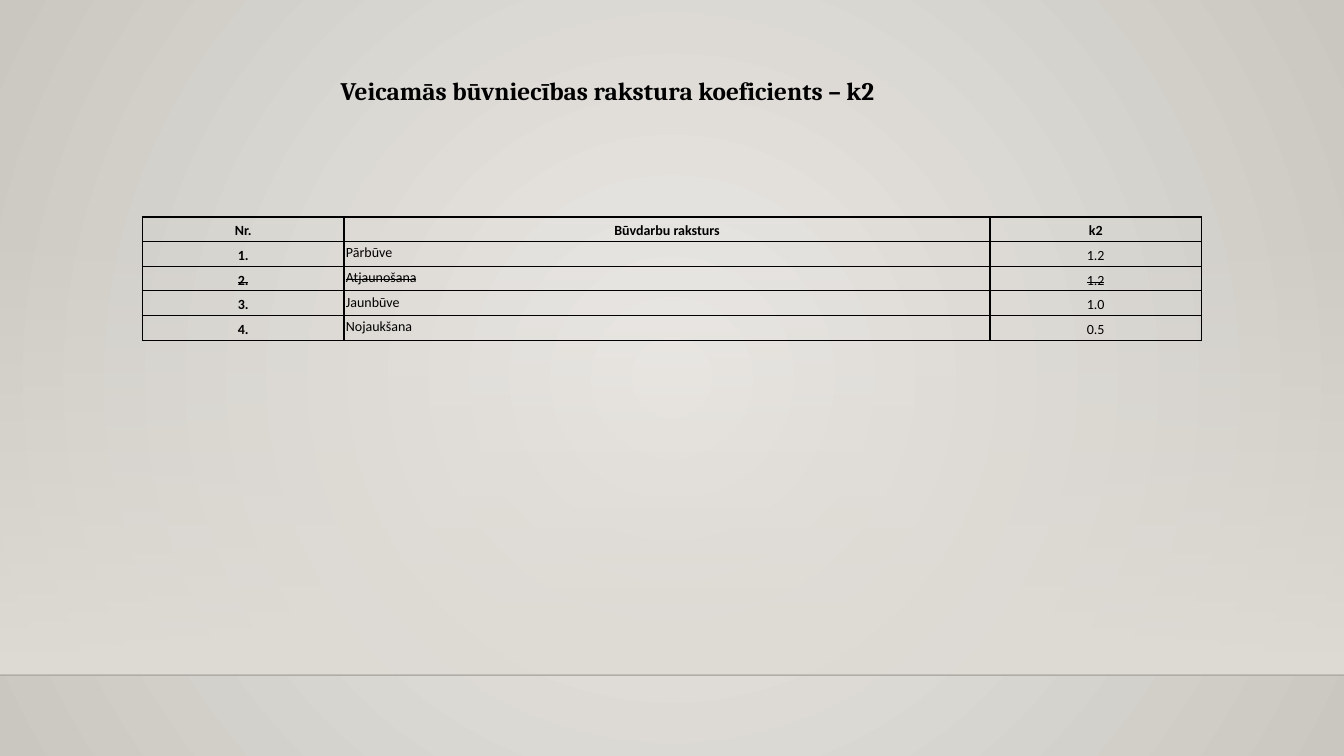
from lxml.etree import SubElement
from pptx import Presentation
from pptx.dml.color import RGBColor
from pptx.enum.shapes import MSO_CONNECTOR, MSO_SHAPE
from pptx.enum.text import MSO_ANCHOR, MSO_AUTO_SIZE, PP_ALIGN
from pptx.oxml import parse_xml
from pptx.oxml.ns import nsdecls, qn
from pptx.util import Inches, Pt

COLORS = {"ink": "000000", "line": "000001", "center": "ECEAE7",
          "edge": "CAC7C1", "floor": "DFDBD5"}
FONTS = {"title": "Cambria", "table": "Calibri"}
HEADERS = ["Nr.", "Būvdarbu raksturs", "k2"]
ROWS = [
    ["1.", "Pārbūve", "1.2"],
    ["2.", "Atjaunošana", "1.2"],
    ["3.", "Jaunbūve", "1.0"],
    ["4.", "Nojaukšana", "0.5"],
]
STRUCK_ROW = 2
COLUMN_WIDTHS = [2, 6.41, 2.1]


def gradient(fill, element, stops, direction):
    fill.gradient()
    old = element.find(".//" + qn("a:gradFill"))
    gs = "".join(
        f'<a:gs pos="{pos}"><a:srgbClr val="{COLORS[name]}">'
        f'<a:alpha val="{alpha}"/></a:srgbClr></a:gs>'
        for pos, name, alpha in stops)
    new = parse_xml(f'<a:gradFill {nsdecls("a")} rotWithShape="1">'
                    f'<a:gsLst>{gs}</a:gsLst>{direction}</a:gradFill>')
    old.getparent().replace(old, new)


def add_run(p, text, font, size, bold, struck=False):
    r = p.add_run()
    r.text = text
    r.font.name = font
    r.font.size = Pt(size)
    r.font.bold = bold
    r.font.color.rgb = RGBColor.from_string(COLORS["ink"])
    if struck:
        r.font._element.set("strike", "sngStrike")


def add_backdrop(s, width, height):
    gradient(s.background.fill, s.element,
             [(0, "center", 100000), (100000, "edge", 100000)],
             '<a:path path="circle"><a:fillToRect l="50000" t="50000" '
             'r="50000" b="50000"/></a:path>')
    top, horizon = int(height * 0.295), int(height * 0.893)
    sp = s.shapes.add_shape(MSO_SHAPE.RECTANGLE, 0, top, width, horizon - top)
    sp.shadow.inherit = False
    sp.line.fill.background()
    gradient(sp.fill, sp._element,
             [(0, "floor", 0), (100000, "floor", 100000)],
             '<a:lin ang="5400000" scaled="0"/>')
    line = s.shapes.add_connector(MSO_CONNECTOR.STRAIGHT, 0, horizon, width, horizon)
    line.line.width = Pt(1)
    line.line.color.rgb = RGBColor.from_string(COLORS["line"])
    color = line._element.find(".//" + qn("a:srgbClr"))
    SubElement(color, qn("a:alpha"), val="20000")
    SubElement(line._element.spPr, qn("a:effectLst"))


def add_title(s, left, top, width, height):
    title = s.shapes.title
    title.left, title.top, title.width, title.height = left, top, width, height
    tf = title.text_frame
    tf.word_wrap = True
    tf.auto_size = MSO_AUTO_SIZE.SHAPE_TO_FIT_TEXT
    tf.vertical_anchor = MSO_ANCHOR.TOP
    p = tf.paragraphs[0]
    p.alignment = PP_ALIGN.LEFT
    add_run(p, "Veicamās būvniecības rakstura koeficients – k2",
            FONTS["title"], 18, True)


def add_borders(cell):
    tcPr = cell._tc.get_or_add_tcPr()
    for side in ("lnL", "lnR", "lnT", "lnB"):
        ln = SubElement(tcPr, qn(f"a:{side}"), w=str(Pt(1)))
        fill = SubElement(ln, qn("a:solidFill"))
        SubElement(fill, qn("a:srgbClr"), val=COLORS["ink"])


def fill_cell(cell, text, row, col):
    add_borders(cell)
    cell.fill.background()
    cell.margin_left = cell.margin_right = Inches(0.02)
    cell.margin_top = cell.margin_bottom = Inches(0.02)
    p = cell.text_frame.paragraphs[0]
    is_name = row > 0 and col == 1
    p.alignment = PP_ALIGN.LEFT if is_name else PP_ALIGN.CENTER
    p.line_spacing = 1.07 if is_name else Pt(14.7)
    p.space_after = Pt(6)
    add_run(p, text, FONTS["table"], 10, row == 0 or col == 0, row == STRUCK_ROW)


def add_coefficients(s, left, top, width, height):
    data = [HEADERS] + ROWS
    table = s.shapes.add_table(len(data), len(HEADERS), left, top, width, height).table
    table.first_row = table.horz_banding = False
    for column, share in zip(table.columns, COLUMN_WIDTHS):
        column.width = int(width * share / sum(COLUMN_WIDTHS))
    for row, texts in enumerate(data):
        for col, text in enumerate(texts):
            fill_cell(table.cell(row, col), text, row, col)


def main():
    prs = Presentation()
    prs.slide_width, prs.slide_height = Inches(13.33), Inches(7.5)
    width, height = prs.slide_width, prs.slide_height
    s = prs.slides.add_slide(prs.slide_layouts[5])
    add_backdrop(s, width, height)
    add_title(s, int(width * 0.246), int(height * 0.093),
              int(width * 0.5), int(height * 0.053))
    add_coefficients(s, int(width * 0.106), int(height * 0.287),
                     int(width * 0.788), int(height * 0.163))
    prs.save("out.pptx")


if __name__ == "__main__":
    main()
